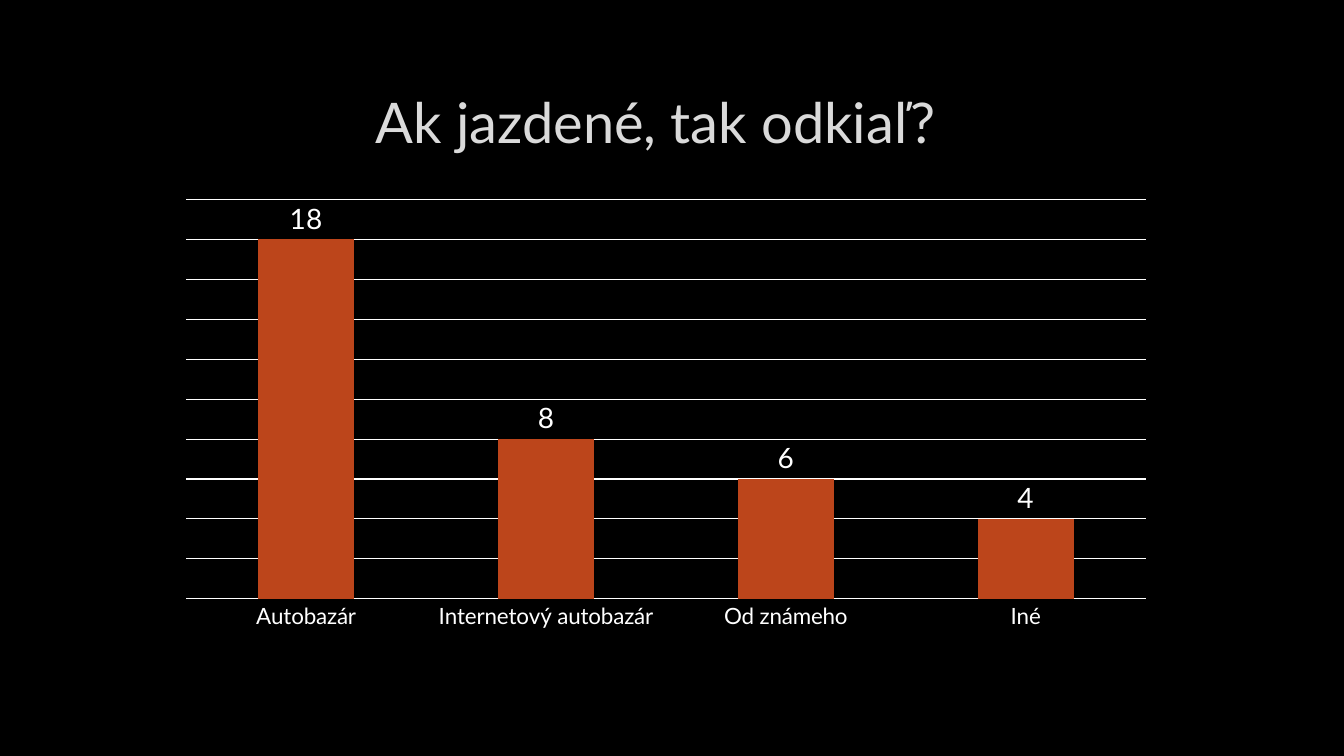
"""Build a slide with a column chart of where used cars are bought."""
from dataclasses import dataclass

from pptx import Presentation
from pptx.chart.chart import Chart
from pptx.chart.data import CategoryChartData
from pptx.dml.color import RGBColor
from pptx.enum.chart import XL_CHART_TYPE, XL_LABEL_POSITION, XL_TICK_LABEL_POSITION, XL_TICK_MARK
from pptx.enum.text import MSO_ANCHOR, PP_ALIGN
from pptx.slide import Slide
from pptx.text.text import Font
from pptx.util import Inches, Pt


@dataclass(frozen=True)
class Theme:
    """Colours and type sizes of the slide."""

    font_name: str = "Lato"
    background: RGBColor = RGBColor(0x00, 0x00, 0x00)
    title: RGBColor = RGBColor(0xDA, 0xDA, 0xDA)
    text: RGBColor = RGBColor(0xFF, 0xFF, 0xFF)
    column: RGBColor = RGBColor(0xBC, 0x45, 0x1B)
    title_size: int = 40
    label_size: int = 20
    category_size: int = 16
    chart_size: int = 10
    grid_width: float = 0.75


@dataclass(frozen=True)
class Source:
    """A place where used cars are bought, with its number of answers."""

    name: str
    answers: int


THEME = Theme()
SOURCES = [
    Source("Autobazár", 18),
    Source("Internetový autobazár", 8),
    Source("Od známeho", 6),
    Source("Iné", 4),
]


def style_font(font: Font, size: int, color: RGBColor) -> None:
    """Apply the theme typeface with a size and a colour."""
    font.name = THEME.font_name
    font.size = Pt(size)
    font.bold = False
    font.color.rgb = color


def add_title(slide: Slide, text: str) -> None:
    """Add the centred slide title."""
    title = slide.shapes.add_textbox(Inches(1), Inches(0.67), Inches(11.32), Inches(1.06))
    frame = title.text_frame
    frame.word_wrap = True
    frame.vertical_anchor = MSO_ANCHOR.MIDDLE
    frame.margin_right = Inches(0.41)
    frame.text = text
    paragraph = frame.paragraphs[0]
    paragraph.alignment = PP_ALIGN.CENTER
    style_font(paragraph.runs[0].font, THEME.title_size, THEME.title)


def add_source_chart(slide: Slide, sources: list[Source]) -> Chart:
    """Add the column chart of answers by source."""
    data = CategoryChartData()
    data.categories = [source.name for source in sources]
    data.add_series("Series 1", [source.answers for source in sources])
    chart = slide.shapes.add_chart(
        XL_CHART_TYPE.COLUMN_CLUSTERED,
        Inches(1.65), Inches(1.89), Inches(9.91), Inches(4.44), data,
    ).chart
    chart.has_legend = False
    chart.has_title = False
    style_font(chart.font, THEME.chart_size, THEME.text)
    return chart


def style_axes(chart: Chart) -> None:
    """Show category names and gridlines only."""
    category_axis = chart.category_axis
    category_axis.major_tick_mark = XL_TICK_MARK.NONE
    category_axis.tick_label_position = XL_TICK_LABEL_POSITION.NEXT_TO_AXIS
    category_axis.format.line.fill.background()
    style_font(category_axis.tick_labels.font, THEME.category_size, THEME.text)

    value_axis = chart.value_axis
    value_axis.minimum_scale = 0
    value_axis.maximum_scale = 20
    value_axis.major_unit = 2
    value_axis.has_major_gridlines = True
    grid_line = value_axis.major_gridlines.format.line
    grid_line.color.rgb = THEME.text
    grid_line.width = Pt(THEME.grid_width)
    value_axis.visible = False


def style_columns(chart: Chart) -> None:
    """Colour the columns and label them with their values."""
    plot = chart.plots[0]
    plot.gap_width = 150
    plot.vary_by_categories = False
    series = plot.series[0]
    series.format.fill.solid()
    series.format.fill.fore_color.rgb = THEME.column
    labels = series.data_labels
    labels.show_value = True
    labels.position = XL_LABEL_POSITION.OUTSIDE_END
    style_font(labels.font, THEME.label_size, THEME.text)


def main() -> None:
    """Create and save the presentation."""
    presentation = Presentation()
    presentation.slide_width = Inches(13.33)
    presentation.slide_height = Inches(7.5)
    slide = presentation.slides.add_slide(presentation.slide_layouts[6])
    slide.background.fill.solid()
    slide.background.fill.fore_color.rgb = THEME.background
    add_title(slide, "Ak jazdené, tak odkiaľ?")
    chart = add_source_chart(slide, SOURCES)
    style_axes(chart)
    style_columns(chart)
    presentation.save("out.pptx")


if __name__ == "__main__":
    main()
